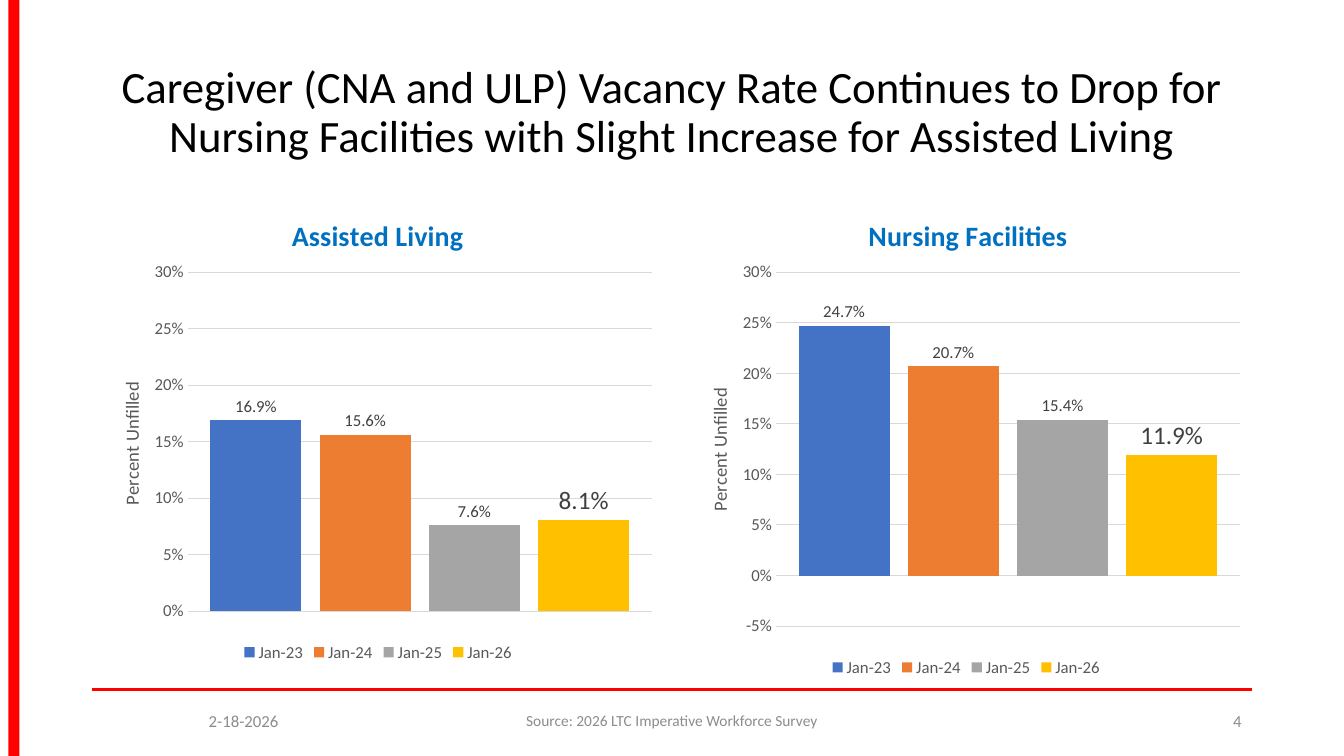
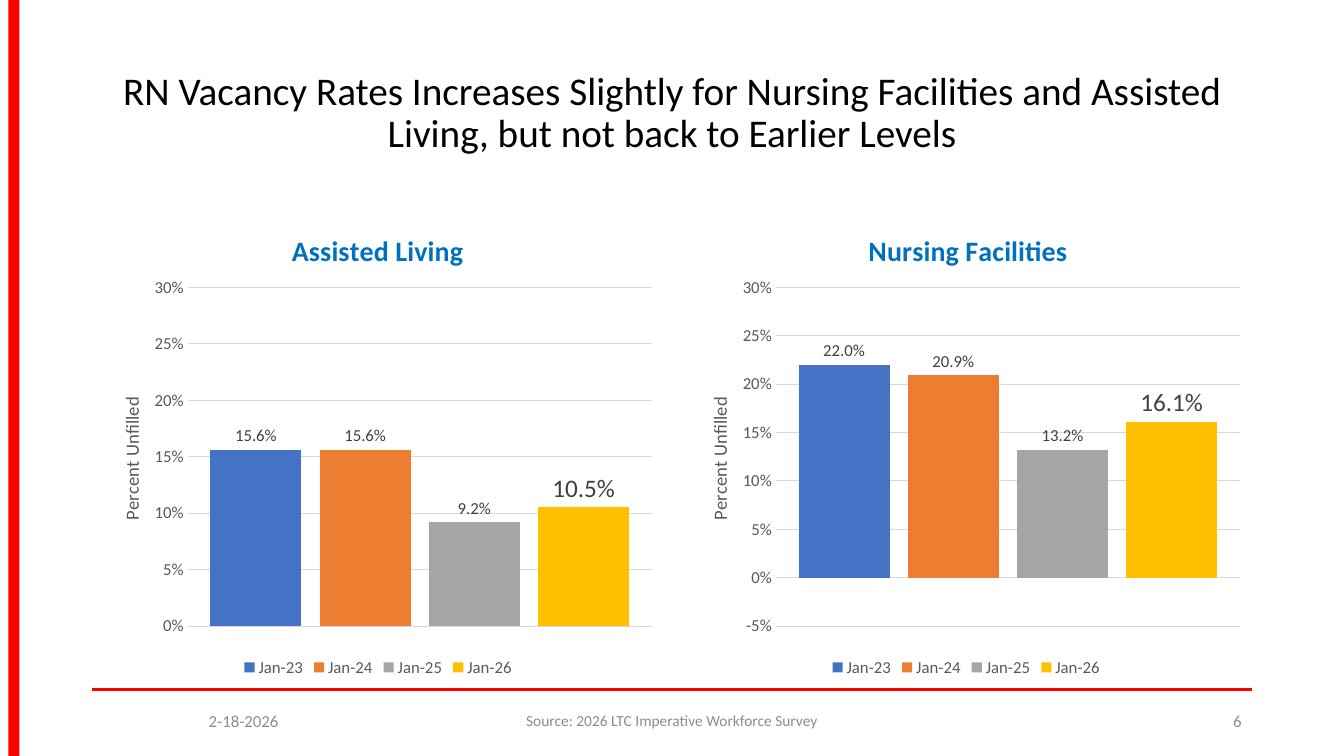
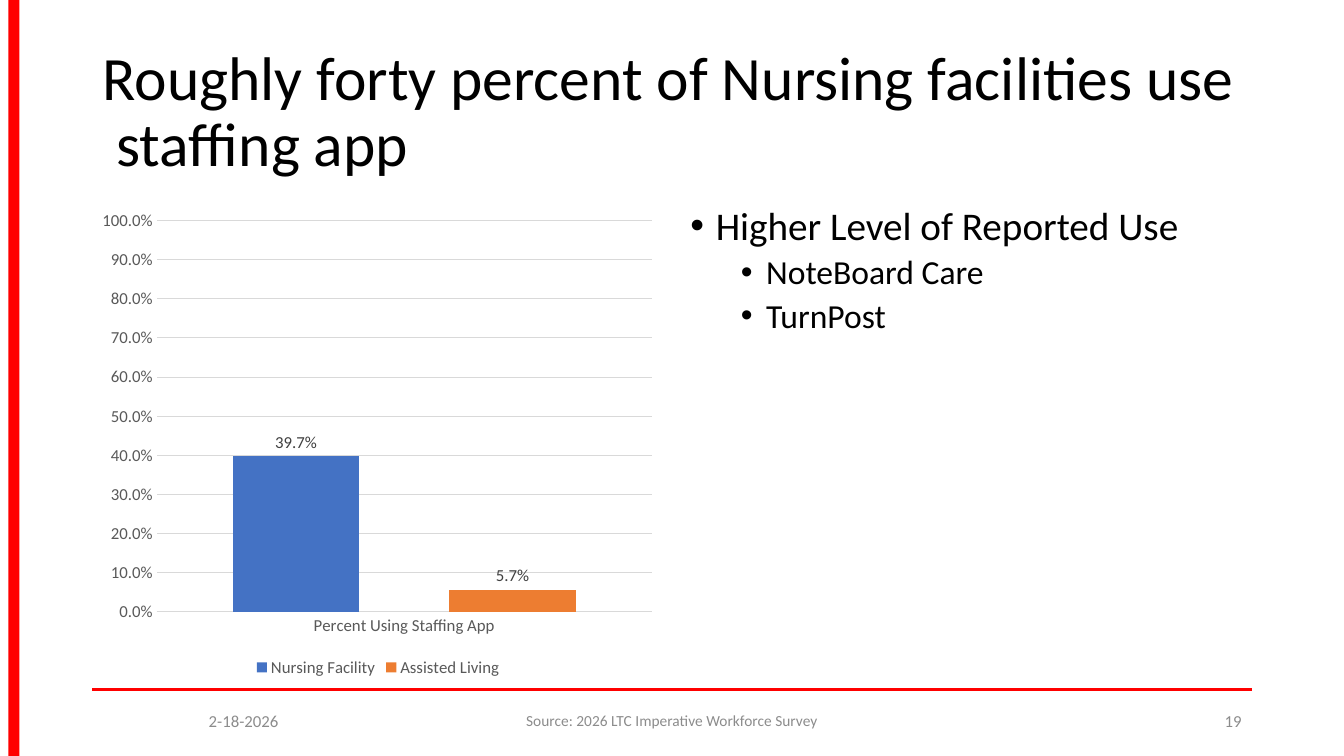
"""Build three workforce survey slides with vacancy and staffing app charts."""
import lxml.etree
import pptx
import pptx.chart.data
import pptx.dml.color
import pptx.enum.chart
import pptx.enum.shapes
import pptx.enum.text
import pptx.oxml.ns
import pptx.util

Cm = pptx.util.Cm
Pt = pptx.util.Pt
qn = pptx.oxml.ns.qn
RGBColor = pptx.dml.color.RGBColor
ALIGN = pptx.enum.text.PP_ALIGN

RED = RGBColor(0xFF, 0x00, 0x00)
BLACK = RGBColor(0x00, 0x00, 0x00)
HEADING_BLUE = RGBColor(0x00, 0x70, 0xC0)
AXIS_GRAY = RGBColor(0x59, 0x59, 0x59)
LABEL_GRAY = RGBColor(0x40, 0x40, 0x40)
GRID_GRAY = RGBColor(0xD9, 0xD9, 0xD9)
FOOTER_GRAY = RGBColor(0x8C, 0x8C, 0x8C)
SERIES_COLORS = [
    RGBColor(0x44, 0x72, 0xC4),
    RGBColor(0xED, 0x7D, 0x31),
    RGBColor(0xA5, 0xA5, 0xA5),
    RGBColor(0xFF, 0xC0, 0x00),
]
FONT = "Calibri"

LEFT, RIGHT_HALF, HALF_WIDTH, FULL_WIDTH = 2.33, 17.15, 14.4, 29.21
CONTENT_TOP, CONTENT_HEIGHT = 5.08, 12.09
DATE = "2-18-2026"
SOURCE = "Source: 2026 LTC Imperative Workforce Survey"
MONTHS = ["Jan-23", "Jan-24", "Jan-25", "Jan-26"]

ASSISTED = {"heading": "Assisted Living", "heading_left": 0.34, "left": LEFT, "low": 0}
NURSING = {"heading": "Nursing Facilities", "heading_left": 0.32, "left": RIGHT_HALF, "low": -0.05}
VACANCY = {
    "category": "1", "names": MONTHS, "label_sizes": [12, 12, 12, 18],
    "high": 0.3, "step": 0.05, "format": "0%", "gap": 50, "overlap": -20,
    "margins": (2.4, 2.16, 0.3, 1.39), "top": CONTENT_TOP, "height": CONTENT_HEIGHT,
}
STAFFING_APP = {
    "category": "Percent Using Staffing App", "names": ["Nursing Facility", "Assisted Living"],
    "label_sizes": [12, 12], "low": 0, "high": 1, "step": 0.1, "format": "0.0%",
    "gap": 120, "overlap": -71, "margins": (1.62, 0.48, 0.3, 1.75),
    "left": LEFT, "top": CONTENT_TOP, "height": CONTENT_HEIGHT, "values": [0.397, 0.057],
}

SLIDES = [
    {
        "title": "Caregiver (CNA and ULP) Vacancy Rate Continues to Drop for "
                 "Nursing Facilities with Slight Increase for Assisted Living",
        "size": 32, "align": ALIGN.CENTER, "number": "4",
        "charts": [
            {**VACANCY, **ASSISTED, "top": 4.7, "values": [0.169, 0.156, 0.076, 0.081]},
            {**VACANCY, **NURSING, "top": 4.7, "height": 12.47,
             "values": [0.247, 0.207, 0.154, 0.119]},
        ],
    },
    {
        "title": "RN Vacancy Rates Increases Slightly for Nursing Facilities and "
                 "Assisted Living, but not back to Earlier Levels",
        "size": 28, "align": ALIGN.CENTER, "number": "6",
        "charts": [
            {**VACANCY, **ASSISTED, "values": [0.156, 0.156, 0.092, 0.105]},
            {**VACANCY, **NURSING, "values": [0.22, 0.209, 0.132, 0.161]},
        ],
    },
    {
        "title": "Roughly forty percent of Nursing facilities use  staffing app",
        "size": 44, "align": ALIGN.LEFT, "number": "19",
        "charts": [STAFFING_APP],
        "bullets": [
            ("Higher Level of Reported Use", 0),
            ("NoteBoard Care", 1),
            ("TurnPost", 1),
        ],
    },
]
BULLET_LEVELS = [
    {"indent": 0.64, "size": 28, "before": 0},
    {"indent": 1.91, "size": 24, "before": 5},
]


def style_font(font, size, color, bold=False):
    font.name = FONT
    font.size = Pt(size)
    font.bold = bold
    font.color.rgb = color


def add_master_marks(deck, slide):
    rule = slide.shapes.add_connector(
        pptx.enum.shapes.MSO_CONNECTOR.STRAIGHT,
        Cm(LEFT), Cm(17.37), Cm(LEFT + FULL_WIDTH), Cm(17.37))
    rule.line.color.rgb = RED
    rule.line.width = Pt(2)
    lxml.etree.SubElement(rule.element.spPr, qn("a:effectLst"))
    band = slide.shapes.add_shape(
        pptx.enum.shapes.MSO_SHAPE.RECTANGLE, Cm(0.21), 0, Cm(0.28), deck.slide_height)
    band.shadow.inherit = False
    band.fill.solid()
    band.fill.fore_color.rgb = RED
    band.line.fill.background()
    for number, mark in enumerate((rule, band), start=20):
        mark.element.find(".//" + qn("p:cNvPr")).set("id", str(number))
        deck.slide_master.element.cSld.spTree.append(mark.element)


def set_title(slide, content):
    title = slide.shapes.title
    title.left, title.top, title.width, title.height = Cm(LEFT), Cm(1.02), Cm(FULL_WIDTH), Cm(3.68)
    frame = title.text_frame
    frame.text = content["title"]
    frame.auto_size = pptx.enum.text.MSO_AUTO_SIZE.NONE
    frame.vertical_anchor = pptx.enum.text.MSO_ANCHOR.MIDDLE
    para = frame.paragraphs[0]
    para.alignment = content["align"]
    para.line_spacing = 0.9
    style_font(para.font, content["size"], BLACK)


def add_text_box(slide, left, top, width, height):
    box = slide.shapes.add_textbox(Cm(left), Cm(top), Cm(width), Cm(height))
    box.text_frame.word_wrap = True
    return box.text_frame


def add_footers(slide, number):
    for text, left, width, size, align in (
        (DATE, LEFT, 7.62, 12, ALIGN.CENTER),
        (SOURCE, 11.22, 11.43, 11, ALIGN.CENTER),
        (number, 23.92, 7.62, 12, ALIGN.RIGHT),
    ):
        frame = add_text_box(slide, left, 17.65, width, 1.01)
        frame.vertical_anchor = pptx.enum.text.MSO_ANCHOR.MIDDLE
        para = frame.paragraphs[0]
        para.text = text
        para.alignment = align
        style_font(para.font, size, FOOTER_GRAY)


def add_bullets(slide, bullets):
    frame = add_text_box(slide, RIGHT_HALF, CONTENT_TOP, HALF_WIDTH, CONTENT_HEIGHT)
    for index, (text, level) in enumerate(bullets):
        para = frame.add_paragraph() if index else frame.paragraphs[0]
        look = BULLET_LEVELS[level]
        para.text = text
        para.level = level
        para.line_spacing = 0.9
        para.space_before = Pt(look["before"])
        properties = para._p.get_or_add_pPr()
        properties.set("marL", str(Cm(look["indent"])))
        properties.set("indent", str(-Cm(0.64)))
        lxml.etree.SubElement(properties, qn("a:buFont")).set("typeface", "Arial")
        lxml.etree.SubElement(properties, qn("a:buChar")).set("char", "•")
        style_font(para.font, look["size"], BLACK)


def place_part(part, position, **settings):
    for old in part.findall(qn("c:layout")):
        part.remove(old)
    layout = lxml.etree.Element(qn("c:layout"))
    manual = lxml.etree.SubElement(layout, qn("c:manualLayout"))
    for name, value in {**settings, "xMode": "edge", "yMode": "edge", **position}.items():
        lxml.etree.SubElement(manual, qn("c:" + name)).set("val", str(value))
    text = part.find(qn("c:tx"))
    part.insert(0 if text is None else 1, layout)


def write_chart_title(title, text, size, color, bold, x, y):
    title.text_frame.text = text
    style_font(title.text_frame.paragraphs[0].font, size, color, bold)
    place_part(title._element, {"x": x, "y": y})


def style_value_axis(axis, content):
    axis.minimum_scale = content["low"]
    axis.maximum_scale = content["high"]
    axis.major_unit = content["step"]
    axis.major_tick_mark = pptx.enum.chart.XL_TICK_MARK.NONE
    axis.format.line.fill.background()
    axis.major_gridlines.format.line.color.rgb = GRID_GRAY
    axis.major_gridlines.format.line.width = Pt(0.75)
    axis.tick_labels.number_format = content["format"]
    axis.tick_labels.number_format_is_linked = False
    style_font(axis.tick_labels.font, 12, AXIS_GRAY)


def style_category_axis(axis):
    axis.major_tick_mark = pptx.enum.chart.XL_TICK_MARK.NONE
    axis.format.line.color.rgb = GRID_GRAY
    axis.format.line.width = Pt(0.75)
    style_font(axis.tick_labels.font, 12, AXIS_GRAY)


def add_column_chart(slide, content):
    data = pptx.chart.data.CategoryChartData(number_format="0.0%")
    data.categories = [content["category"]]
    for name, value in zip(content["names"], content["values"]):
        data.add_series(name, [value])
    chart = slide.shapes.add_chart(
        pptx.enum.chart.XL_CHART_TYPE.COLUMN_CLUSTERED,
        Cm(content["left"]), Cm(content["top"]), Cm(HALF_WIDTH), Cm(content["height"]), data).chart
    style_font(chart.font, 10, BLACK)

    plot = chart.plots[0]
    plot.vary_by_categories = False
    plot.gap_width = content["gap"]
    plot.overlap = content["overlap"]
    for series, color, size in zip(plot.series, SERIES_COLORS, content["label_sizes"]):
        series.invert_if_negative = False
        series.format.fill.solid()
        series.format.fill.fore_color.rgb = color
        labels = series.data_labels
        labels.show_value = True
        labels.number_format = "0.0%"
        labels.number_format_is_linked = False
        labels.position = pptx.enum.chart.XL_LABEL_POSITION.OUTSIDE_END
        style_font(labels.font, size, LABEL_GRAY)

    style_value_axis(chart.value_axis, content)
    chart.has_title = "heading" in content
    if chart.has_title:
        write_chart_title(chart.chart_title, content["heading"], 20, HEADING_BLUE, True,
                          content["heading_left"], 0.05)
        write_chart_title(chart.value_axis.axis_title, "Percent Unfilled", 13.3, AXIS_GRAY, False,
                          0.04, 0.4)
        chart.category_axis.visible = False
    else:
        style_category_axis(chart.category_axis)

    chart.has_legend = True
    chart.legend.position = pptx.enum.chart.XL_LEGEND_POSITION.BOTTOM
    chart.legend.include_in_layout = False
    style_font(chart.legend.font, 12, AXIS_GRAY)

    left, top, right, bottom = content["margins"]
    height = content["height"]
    place_part(chart._chartSpace.chart.plotArea, {
        "x": left / HALF_WIDTH, "y": top / height,
        "w": (HALF_WIDTH - left - right) / HALF_WIDTH, "h": (height - top - bottom) / height,
    }, layoutTarget="inner")


def main():
    deck = pptx.Presentation()
    deck.slide_width, deck.slide_height = Cm(33.87), Cm(19.05)
    for index, content in enumerate(SLIDES):
        slide = deck.slides.add_slide(deck.slide_layouts.get_by_name("Title Only"))
        if index == 0:
            add_master_marks(deck, slide)
        set_title(slide, content)
        for chart_content in content["charts"]:
            add_column_chart(slide, chart_content)
        if "bullets" in content:
            add_bullets(slide, content["bullets"])
        add_footers(slide, content["number"])
    deck.save("out.pptx")


if __name__ == "__main__":
    main()
